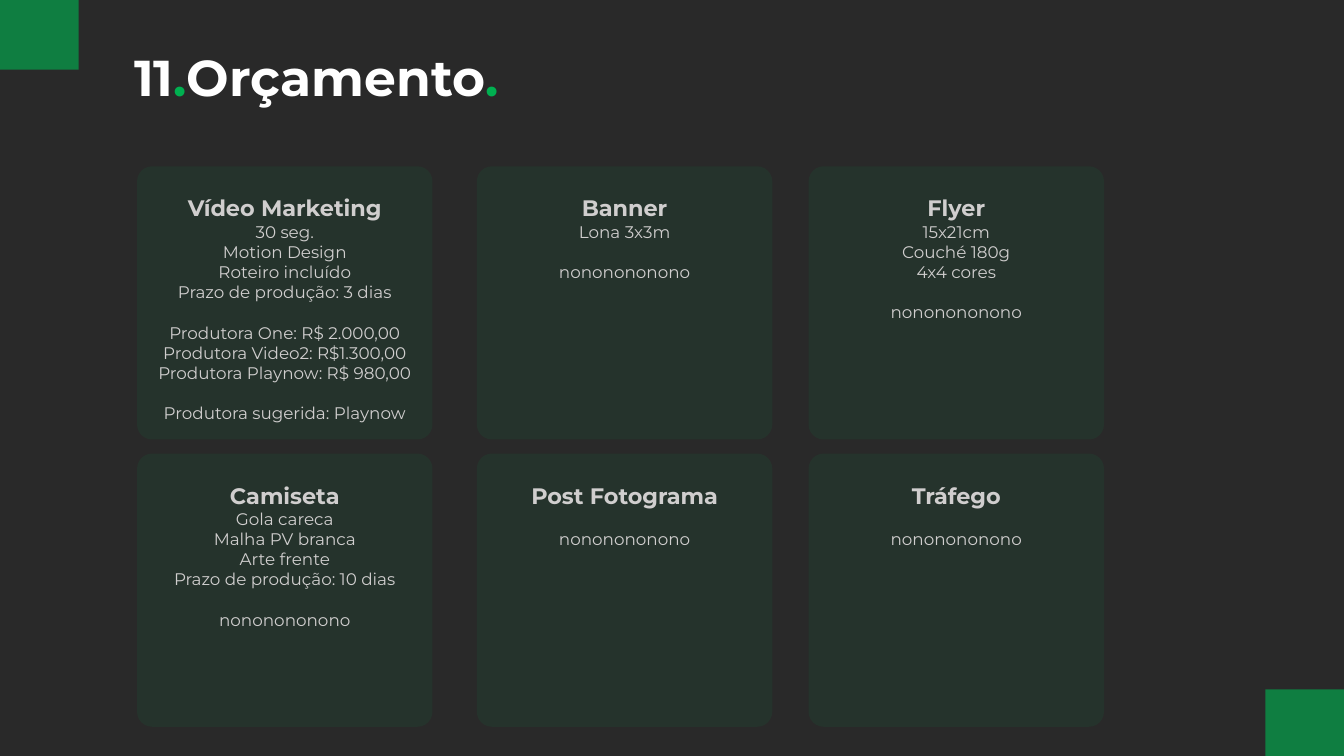
from dataclasses import dataclass
from itertools import product

from lxml.etree import SubElement
from pptx import Presentation
from pptx.dml.color import RGBColor
from pptx.enum.shapes import MSO_SHAPE as Preset
from pptx.enum.text import MSO_ANCHOR as Anchor, MSO_AUTO_SIZE as AutoSize, PP_ALIGN as Align
from pptx.oxml.ns import qn
from pptx.util import Inches, Pt


@dataclass(frozen=True)
class Theme:
    font: str = "Montserrat"
    backdrop: str = "292929"
    accent: str = "00B050"
    title: str = "FFFFFF"
    text: str = "D0CECE"
    title_size: float = 36
    heading_size: float = 16
    body_size: float = 12
    group_gap: float = 14.5
    corner_opacity: int = 63
    card_opacity: int = 8


@dataclass(frozen=True)
class Box:
    left: float
    top: float
    width: float
    height: float

    def inset(self, across, down, width, height):
        return Box(self.left + across, self.top + down, width, height)

    def lengths(self):
        return [Inches(n) for n in (self.left, self.top, self.width, self.height)]


THEME = Theme()
SLIDE = Box(0, 0, 13.33, 7.5)
CORNER_WIDTH, CORNER_HEIGHT = 0.78, 0.69
CARD_WIDTH, CARD_HEIGHT = 2.93, 2.71
COLUMNS = (1.36, 4.73, 8.02)
ROWS = (1.65, 4.5)

# Each card has a heading, then groups of lines; an empty first group leaves a gap.
CARDS = [
    ("Vídeo Marketing", [
        ["30 seg.", "Motion Design", "Roteiro incluído", "Prazo de produção: 3 dias"],
        ["Produtora One: R$ 2.000,00", "Produtora Video2: R$1.300,00",
         "Produtora Playnow: R$ 980,00"],
        ["Produtora sugerida: Playnow"],
    ]),
    ("Banner", [["Lona 3x3m"], ["nononononono"]]),
    ("Flyer", [["15x21cm", "Couché 180g", "4x4 cores"], ["nononononono"]]),
    ("Camiseta", [
        ["Gola careca", "Malha PV branca", "Arte frente", "Prazo de produção: 10 dias"],
        ["nononononono"],
    ]),
    ("Post Fotograma", [[], ["nononononono"]]),
    ("Tráfego", [[], ["nononononono"]]),
]


def add_span(para, text, *, size, color=THEME.text, bold=False):
    span = para.add_run()
    span.text = text
    span.font.name = THEME.font
    span.font.size = Pt(size)
    span.font.bold = bold
    span.font.color.rgb = RGBColor.from_string(color)


def add_panel(slide, preset, box, opacity):
    """Draw an accent-coloured shape with the given opacity in percent."""
    panel = slide.shapes.add_shape(preset, *box.lengths())
    panel.shadow.inherit = False
    panel.line.fill.background()
    panel.fill.solid()
    panel.fill.fore_color.rgb = RGBColor.from_string(THEME.accent)
    color = panel.fill._xPr.find(qn("a:solidFill"))[0]
    SubElement(color, qn("a:alpha"), val=str(opacity * 1000))
    return panel


def add_corners(slide, box):
    for across, down in ((box.width - CORNER_WIDTH, box.height - CORNER_HEIGHT + 0.03),
                         (0, 0)):
        corner = box.inset(across, down, CORNER_WIDTH, CORNER_HEIGHT)
        add_panel(slide, Preset.RECTANGLE, corner, THEME.corner_opacity)


def add_title(slide, box):
    title = slide.shapes.title
    title.left, title.top, title.width, title.height = box.lengths()
    frame = title.text_frame
    frame.vertical_anchor = Anchor.TOP
    frame.word_wrap = True
    frame.auto_size = AutoSize.NONE
    para = frame.paragraphs[0]
    para.alignment = Align.LEFT
    for text, color in (("11", THEME.title), (".", THEME.accent),
                        ("Orçamento", THEME.title), (".", THEME.accent)):
        add_span(para, text, size=THEME.title_size, color=color, bold=True)


def add_card(slide, box, heading, groups):
    panel = add_panel(slide, Preset.ROUNDED_RECTANGLE, box, THEME.card_opacity)
    panel.adjustments[0] = 0.055
    frame = slide.shapes.add_textbox(*box.inset(0.09, 0.23, 2.75, 2.19).lengths()).text_frame
    frame.word_wrap = True
    para = frame.paragraphs[0]
    para.alignment = Align.CENTER
    add_span(para, heading, size=THEME.heading_size, bold=True)
    for group_index, group in enumerate(groups):
        for line_index, line in enumerate(group):
            para = frame.add_paragraph()
            para.alignment = Align.CENTER
            if group_index and not line_index:
                para.space_before = Pt(THEME.group_gap)
            add_span(para, line, size=THEME.body_size)


def add_budget_slide(deck):
    slide = deck.slides.add_slide(deck.slide_layouts[5])
    slide.background.fill.solid()
    slide.background.fill.fore_color.rgb = RGBColor.from_string(THEME.backdrop)
    add_corners(slide, SLIDE)
    add_title(slide, Box(1.23, 0.41, 4.62, 0.71))
    for (top, left), (heading, groups) in zip(product(ROWS, COLUMNS), CARDS):
        add_card(slide, Box(left, top, CARD_WIDTH, CARD_HEIGHT), heading, groups)


def main():
    deck = Presentation()
    deck.slide_width, deck.slide_height = Inches(SLIDE.width), Inches(SLIDE.height)
    add_budget_slide(deck)
    deck.save("out.pptx")


if __name__ == "__main__":
    main()
